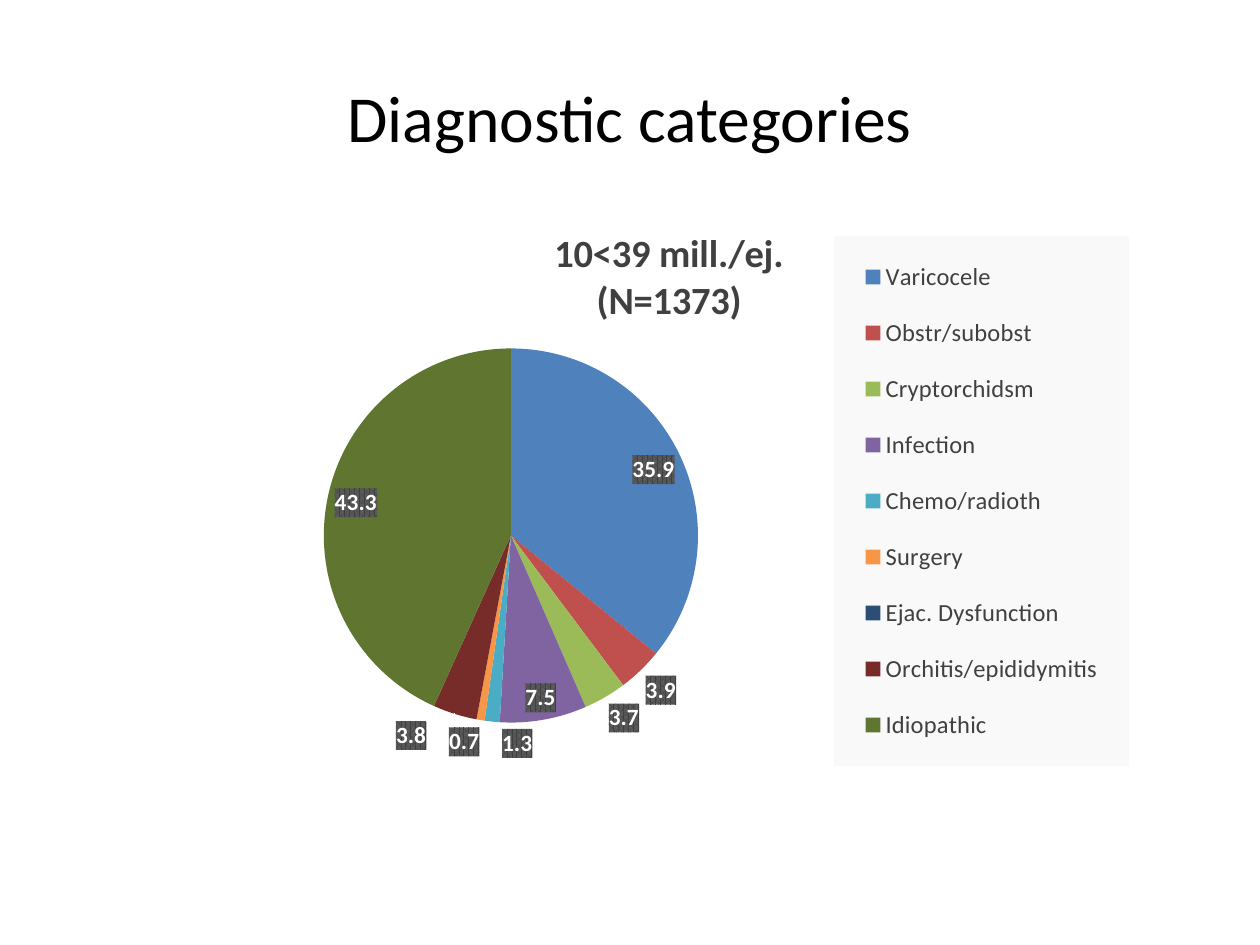
import pptx
import pptx.chart.data
import pptx.dml.color
import pptx.enum.chart
import pptx.enum.text
import pptx.oxml
import pptx.oxml.ns
import pptx.util
from pptx.util import Inches

NAMESPACES = pptx.oxml.ns.nsdecls("c", "a")
CATEGORIES = [
    # name, percentage, colour
    ("Varicocele", 35.9, "4F81BD"),
    ("Obstr/subobst", 3.9, "C0504D"),
    ("Cryptorchidsm", 3.7, "9BBB59"),
    ("Infection", 7.5, "8064A2"),
    ("Chemo/radioth", 1.3, "4BACC6"),
    ("Surgery", 0.7, "F79646"),
    ("Ejac. Dysfunction", 0, "2C4D75"),
    ("Orchitis/epididymitis", 3.8, "772C2A"),
    ("Idiopathic", 43.3, "5F7530"),
]
LEGEND_FILL = '<a:solidFill><a:srgbClr val="F9F9F9"/></a:solidFill>'
LABEL_FILL = (
    '<a:pattFill prst="pct75"><a:fgClr><a:srgbClr val="404040"/></a:fgClr>'
    '<a:bgClr><a:srgbClr val="595959"/></a:bgClr></a:pattFill>'
)


def colour(value):
    return pptx.dml.color.RGBColor.from_string(value)


def format_font(font, size, hex_colour, bold=False):
    values = {"name": "Calibri", "size": pptx.util.Pt(size), "bold": bold}
    for name, value in values.items():
        setattr(font, name, value)
    font.color.rgb = colour(hex_colour)


def set_layout(element, index, left, top, width=None, height=None):
    """Place a chart part, in fractions of the chart's box."""
    for layout in element.findall(pptx.oxml.ns.qn("c:layout")):
        element.remove(layout)
    target = '<c:layoutTarget val="inner"/>' if index == 0 else ""
    modes = '<c:xMode val="edge"/><c:yMode val="edge"/>'
    sizes = {"x": left, "y": top, "w": width, "h": height}
    values = "".join(
        f'<c:{name} val="{value}"/>' for name, value in sizes.items() if value is not None
    )
    element.insert(index, pptx.oxml.parse_xml(
        f"<c:layout {NAMESPACES}><c:manualLayout>{target}{modes}{values}"
        "</c:manualLayout></c:layout>"))


def set_background(element, fill):
    """Fill the box behind a chart part's text."""
    text_properties = element.find(pptx.oxml.ns.qn("c:txPr"))
    text_properties.addprevious(
        pptx.oxml.parse_xml(f"<c:spPr {NAMESPACES}>{fill}</c:spPr>"))


def add_title(slide, left, top, width, height):
    title = slide.shapes.title
    box = {"left": left, "top": top, "width": width, "height": height}
    for name, value in box.items():
        setattr(title, name, value)
    title.text_frame.text = "Diagnostic categories"
    title.text_frame.vertical_anchor = pptx.enum.text.MSO_ANCHOR.MIDDLE
    paragraph = title.text_frame.paragraphs[0]
    paragraph.alignment = pptx.enum.text.PP_ALIGN.CENTER
    format_font(paragraph.runs[0].font, 37.5, "000000")


def add_pie_chart(slide, left, top, width, height):
    data = pptx.chart.data.CategoryChartData(number_format="General")
    names, values, _ = zip(*CATEGORIES)
    data.categories = names
    data.add_series("Series 1", values)
    chart = slide.shapes.add_chart(
        pptx.enum.chart.XL_CHART_TYPE.PIE, left, top, width, height, data).chart
    format_font(chart.font, 10, "000000")

    # Chart title
    chart.has_title = True
    title_frame = chart.chart_title.text_frame
    title_frame.text = "10<39 mill./ej.\n(N=1373)"
    for paragraph in title_frame.paragraphs:
        format_font(paragraph.runs[0].font, 22, "404040", bold=True)
    set_layout(chart.chart_title._element, 1, 0.42, 0.04)

    # Legend
    chart.has_legend = True
    legend = chart.legend
    legend.position = pptx.enum.chart.XL_LEGEND_POSITION.RIGHT
    legend.include_in_layout = False
    format_font(legend.font, 14, "404040")
    set_background(legend._element, LEGEND_FILL)
    set_layout(legend._element, 1, 0.67, 0.06, 0.26, 0.92)

    # Slices
    plot = chart.plots[0]
    plot.vary_by_categories = True
    series = plot.series[0]
    for index, (_, _, slice_colour) in enumerate(CATEGORIES):
        fill = series.points[index].format.fill
        fill.solid()
        fill.fore_color.rgb = colour(slice_colour)
    plot_area = chart._chartSpace.chart.plotArea
    set_layout(plot_area, 0, 0.22, 0.25, 0.33, 0.66)

    # Value labels, none on an empty slice
    labels = series.data_labels
    labels.show_value = True
    labels.position = pptx.enum.chart.XL_LABEL_POSITION.BEST_FIT
    format_font(labels.font, 13.3, "FFFFFF", bold=True)
    set_background(labels._element, LABEL_FILL)
    labels._element.insert(0, pptx.oxml.parse_xml(
        f'<c:dLbl {NAMESPACES}><c:idx val="{values.index(0)}"/>'
        '<c:delete val="1"/></c:dLbl>'))


def main():
    presentation = pptx.Presentation()
    presentation.slide_width = Inches(10)
    presentation.slide_height = Inches(7.5)
    slide = presentation.slides.add_slide(presentation.slide_layouts[5])
    add_title(slide, Inches(0.5), Inches(0.3), Inches(9), Inches(1.25))
    add_pie_chart(slide, Inches(0.59), Inches(1.6), Inches(9), Inches(4.57))
    presentation.save("out.pptx")


if __name__ == "__main__":
    main()
